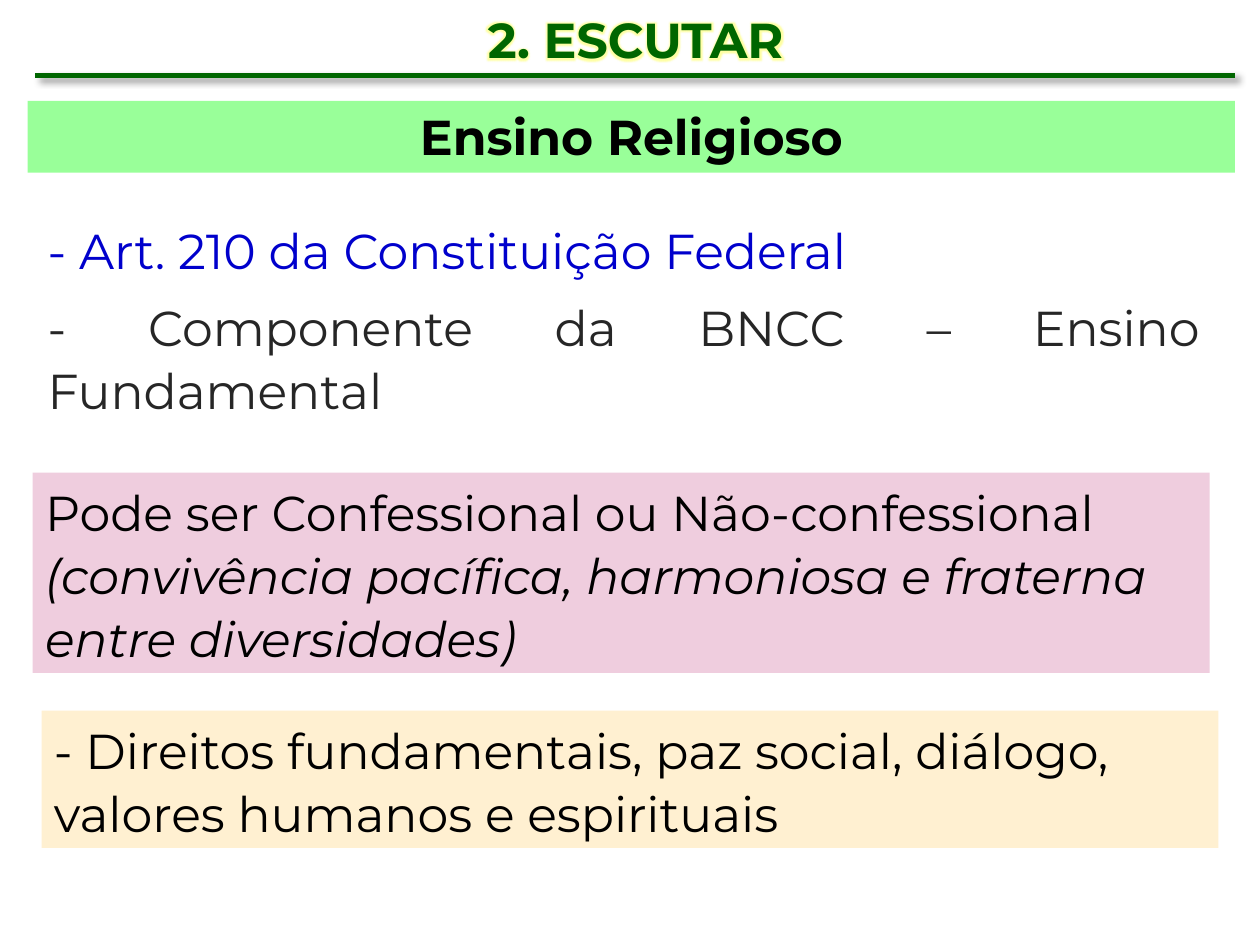
from lxml import etree
from pptx import Presentation
from pptx.dml.color import RGBColor
from pptx.enum.shapes import MSO_CONNECTOR, MSO_SHAPE
from pptx.enum.text import MSO_ANCHOR, PP_ALIGN
from pptx.oxml import parse_xml
from pptx.oxml.ns import nsdecls, qn
from pptx.util import Inches, Pt

LEFT, CENTER, JUSTIFY = PP_ALIGN.LEFT, PP_ALIGN.CENTER, PP_ALIGN.JUSTIFY
TOP, MIDDLE = MSO_ANCHOR.TOP, MSO_ANCHOR.MIDDLE
RECT, STRAIGHT = MSO_SHAPE.RECTANGLE, MSO_CONNECTOR.STRAIGHT

BLACK = RGBColor(0x00, 0x00, 0x00)
WHITE = RGBColor(0xFF, 0xFF, 0xFF)
GREEN = RGBColor(0x00, 0x66, 0x00)
MINT = RGBColor(0x99, 0xFF, 0x99)
BLUE = RGBColor(0x00, 0x00, 0xCC)
GRAY = RGBColor(0x26, 0x26, 0x26)
PINK = RGBColor(0xEF, 0xCD, 0xDE)
CREAM = RGBColor(0xFF, 0xF0, 0xD1)
YELLOW = RGBColor(0xFF, 0xFF, 0x66)

deck = Presentation()
deck.slide_width, deck.slide_height = Inches(10), Inches(7.5)
slide = deck.slides.add_slide(deck.slide_layouts[6])


def add_text(paras, at, fill=None, align=LEFT, anchor=TOP, bold=False, line=None, after=0):
    area = [Inches(n) for n in at]
    if fill is None:
        box = slide.shapes.add_textbox(*area)
    else:
        box = slide.shapes.add_shape(RECT, *area)
        box.shadow.inherit = False
        box.fill.solid()
        box.fill.fore_color.rgb = fill
        box.line.fill.background()
    frame = box.text_frame
    frame.word_wrap = True
    frame.vertical_anchor = anchor
    for i, runs in enumerate(paras):
        para = frame.paragraphs[0] if i == 0 else frame.add_paragraph()
        para.alignment = align
        para.line_spacing = line
        para.space_after = Pt(after)
        for text, color, slant in runs:
            run = para.add_run()
            run.text = text
            font = run.font
            font.name, font.size = "Montserrat", Pt(28)
            font.bold, font.italic = bold, slant
            font.color.rgb = color
    return box


title = add_text([[("2. ESCUTAR", GREEN, False)]], (0.28, 0.05, 9.53, 0.52),
                 align=CENTER, anchor=MIDDLE, bold=True)
glow = parse_xml(
    f'<a:effectLst {nsdecls("a")}><a:glow rad="{Pt(5)}">'
    f'<a:srgbClr val="{YELLOW}"><a:alpha val="60000"/></a:srgbClr>'
    '</a:glow></a:effectLst>')
for fill in title.text_frame.paragraphs[0].runs[0].font._element.findall(qn("a:solidFill")):
    fill.addnext(glow)

rule = slide.shapes.add_connector(STRAIGHT, Inches(0.28), Inches(0.6), Inches(9.8), Inches(0.6))
rule.line.color.rgb = GREEN
rule.line.width = Pt(3)
effect = etree.SubElement(rule._element.spPr, qn("a:effectLst"))
shade = etree.SubElement(effect, qn("a:outerShdw"), blurRad=str(Pt(4)), dist=str(Pt(3)),
                         dir="2700000", algn="tl", rotWithShape="0")
tone = etree.SubElement(shade, qn("a:srgbClr"), val=str(BLACK))
etree.SubElement(tone, qn("a:alpha"), val="40000")

add_text([[("Ensino Religioso", BLACK, False)]], (0.22, 0.8, 9.58, 0.57),
         fill=MINT, align=CENTER, bold=True)

law = [[("- Art. 210 da Constituição Federal", BLUE, False)],
       [("- Componente da BNCC – Ensino Fundamental", GRAY, False)]]
kinds = [[("Pode ser Confessional ou Não-confessional ", BLACK, False),
          ("(convivência pacífica, harmoniosa e fraterna entre diversidades)", BLACK, True)]]
goals = [[("- Direitos fundamentais, paz social, diálogo, valores humanos e espirituais",
           BLACK, False)]]

for paras, left, top, height, fill, align in (
    (law, 0.28, 1.67, 1.7, WHITE, JUSTIFY),
    (kinds, 0.26, 3.75, 1.59, PINK, LEFT),
    (goals, 0.33, 5.64, 1.09, CREAM, LEFT),
):
    add_text(paras, (left, top, 9.34, height), fill=fill, align=align, line=1.07, after=8)

deck.save("out.pptx")
